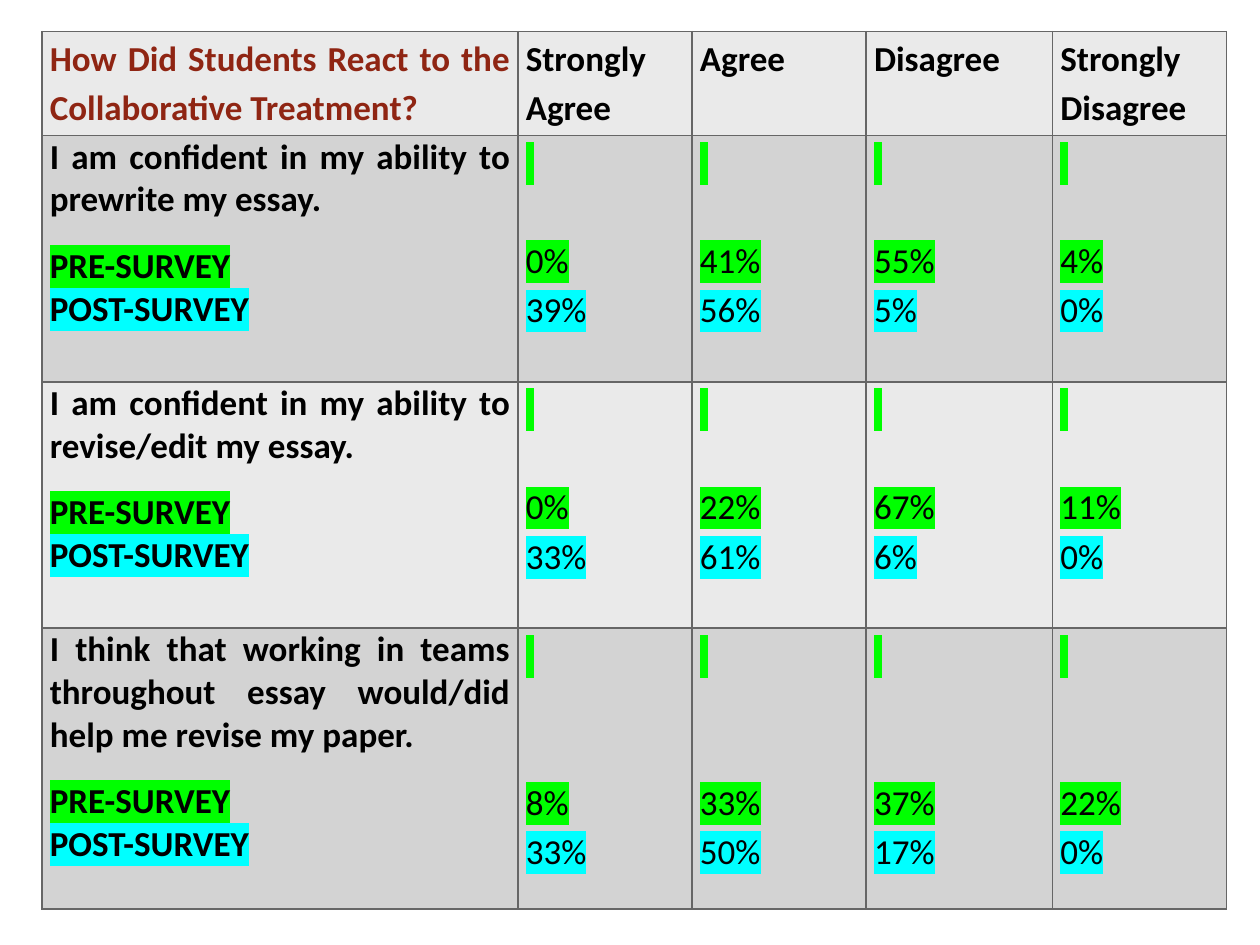
import pptx
import pptx.dml.color
import pptx.enum.text
import pptx.oxml
import pptx.oxml.ns
import pptx.util
from dataclasses import dataclass

Pt = pptx.util.Pt
RGBColor = pptx.dml.color.RGBColor


@dataclass(frozen=True)
class Theme:
    font: str = "Calibri"
    size: float = 20
    title: str = "8F2513"
    text: str = "000000"
    light_row: str = "EAEAEA"
    dark_row: str = "D3D3D3"
    border: str = "666666"
    pre_survey: str = "00FF00"
    post_survey: str = "00FFFF"


theme = Theme()
NAMESPACE = pptx.oxml.ns.nsdecls("a")


def style_cell(cell, fill):
    """Set the fill, margins and four borders of a table cell."""
    cell.fill.solid()
    cell.fill.fore_color.rgb = RGBColor.from_string(fill)
    cell.margin_left = cell.margin_right = Pt(4.5)
    cell.margin_top = cell.margin_bottom = 0
    properties = cell._tc.get_or_add_tcPr()
    for position, side in enumerate(("lnL", "lnR", "lnT", "lnB")):
        properties.insert(position, pptx.oxml.parse_xml(
            f'<a:{side} {NAMESPACE} w="12700"><a:solidFill>'
            f'<a:srgbClr val="{theme.border}"/></a:solidFill></a:{side}>'))


def write_lines(cell, lines, bold, spacing, color=theme.text):
    """Write one paragraph for each (text, highlight, space before)."""
    for index, (text, highlight, gap) in enumerate(lines):
        frame = cell.text_frame
        paragraph = frame.add_paragraph() if index else frame.paragraphs[0]
        paragraph.alignment = pptx.enum.text.PP_ALIGN.JUSTIFY
        paragraph.line_spacing = spacing
        paragraph.space_before = Pt(gap)
        paragraph.font.name = theme.font
        paragraph.font.size = Pt(theme.size)
        paragraph.font.bold = bold
        paragraph.font.color.rgb = RGBColor.from_string(color)
        run = paragraph.add_run()
        run.text = text
        if highlight:
            run._r.get_or_add_rPr().append(pptx.oxml.parse_xml(
                f'<a:highlight {NAMESPACE}><a:srgbClr val="{highlight}"/></a:highlight>'))


headings = [
    ["How Did Students React to the Collaborative Treatment?"],
    ["Strongly", "Agree"],
    ["Agree"],
    ["Disagree"],
    ["Strongly", "Disagree"],
]
# Statement, gap above the percentages, pre-survey and post-survey answers
questions = [
    ("I am confident in my ability to prewrite my essay.", 28,
     ["0%", "41%", "55%", "4%"], ["39%", "56%", "5%", "0%"]),
    ("I am confident in my ability to revise/edit my essay.", 28,
     ["0%", "22%", "67%", "11%"], ["33%", "61%", "6%", "0%"]),
    ("I think that working in teams throughout essay would/did help me revise my paper.", 56,
     ["8%", "33%", "37%", "22%"], ["33%", "50%", "17%", "0%"]),
]
column_widths = [272, 99.5, 99.5, 106.5, 99.5]
row_heights = [59.5, 140.75, 140.75, 160.5]

presentation = pptx.Presentation()
presentation.slide_width = Pt(720)
presentation.slide_height = Pt(540)
slide = presentation.slides.add_slide(presentation.slide_layouts[6])

table = slide.shapes.add_table(
    len(row_heights), len(column_widths), Pt(24), Pt(18),
    Pt(sum(column_widths)), Pt(sum(row_heights))).table
table.first_row = False
table.horz_banding = False
for column, width in zip(table.columns, column_widths):
    column.width = Pt(width)
for index, (row, height) in enumerate(zip(table.rows, row_heights)):
    row.height = Pt(height)
    for cell in row.cells:
        style_cell(cell, theme.dark_row if index % 2 else theme.light_row)

for index, heading in enumerate(headings):
    write_lines(table.cell(0, index), [(line, None, 0) for line in heading], True, 1.15,
                theme.text if index else theme.title)

for row, (statement, gap, before, after) in enumerate(questions, start=1):
    write_lines(table.cell(row, 0), [
        (statement, None, 0),
        ("PRE-SURVEY", theme.pre_survey, 13.4),
        ("POST-SURVEY", theme.post_survey, 0),
    ], True, 1.0)
    for column, (pre, post) in enumerate(zip(before, after), start=1):
        write_lines(table.cell(row, column), [
            (" ", theme.pre_survey, 0),
            (pre, theme.pre_survey, gap),
            (post, theme.post_survey, 0),
        ], False, 1.15)

presentation.save("out.pptx")
